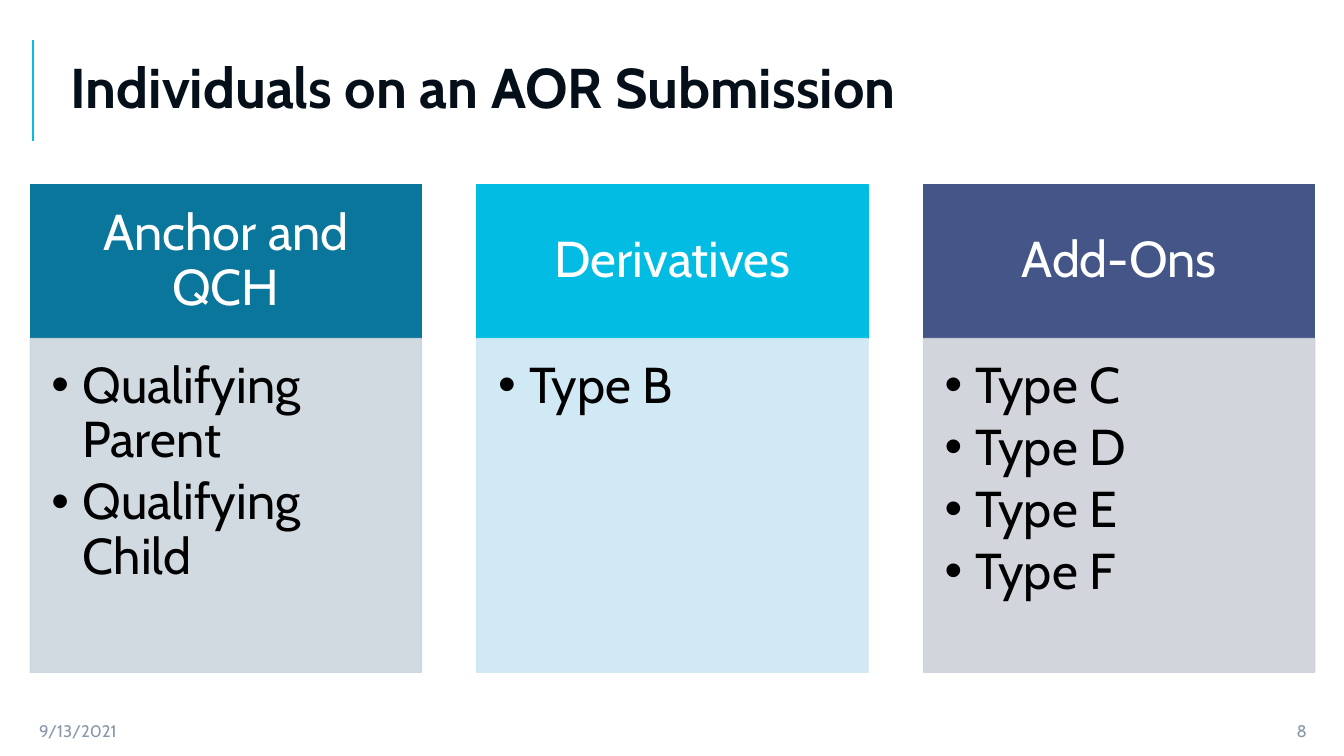
import pptx
import pptx.util
import pptx.dml.color
import pptx.enum.shapes
import pptx.enum.text
import pptx.oxml
import pptx.oxml.ns
from lxml import etree

Inches = pptx.util.Inches
Pt = pptx.util.Pt
RGBColor = pptx.dml.color.RGBColor
PP_ALIGN = pptx.enum.text.PP_ALIGN
MSO_ANCHOR = pptx.enum.text.MSO_ANCHOR
qn = pptx.oxml.ns.qn

FONT = "Cabin"
WHITE = RGBColor(0xFF, 0xFF, 0xFF)
BLACK = RGBColor(0x00, 0x00, 0x00)
NAVY = RGBColor(0x05, 0x0F, 0x1A)
GREY = RGBColor(0x88, 0x97, 0xA8)
TEAL = RGBColor(0x0A, 0x76, 0x9B)
CYAN = RGBColor(0x02, 0xBC, 0xE3)
INDIGO = RGBColor(0x44, 0x55, 0x88)
PALE_TEAL = RGBColor(0xCC, 0xD6, 0xDE)
PALE_CYAN = RGBColor(0xCC, 0xE7, 0xF4)
PALE_INDIGO = RGBColor(0xCF, 0xD1, 0xDA)

COLUMNS = [
    ("Anchor and QCH", ["Qualifying Parent", "Qualifying Child"], TEAL, PALE_TEAL),
    ("Derivatives", ["Type B"], CYAN, PALE_CYAN),
    ("Add-Ons", ["Type C", "Type D", "Type E", "Type F"], INDIGO, PALE_INDIGO),
]


def format_text(tf, size, color, align=PP_ALIGN.LEFT, bold=False, spacing=None):
    """Apply one text style to every paragraph of a frame."""
    tf.word_wrap = True
    for p in tf.paragraphs:
        p.alignment = align
        p.line_spacing = spacing
        for r in p.runs:
            r.font.name = FONT
            r.font.size = Pt(size)
            r.font.bold = bold
            r.font.color.rgb = color


def set_insets(tf, left, top, right, bottom):
    """Set the margins of a text frame in inches."""
    tf.margin_left, tf.margin_top = Inches(left), Inches(top)
    tf.margin_right, tf.margin_bottom = Inches(right), Inches(bottom)


def add_panel(s, x, y, w, h, color, text):
    """Add a flat rectangle holding text and return it."""
    sp = s.shapes.add_shape(pptx.enum.shapes.MSO_SHAPE.RECTANGLE,
                            Inches(x), Inches(y), Inches(w), Inches(h))
    sp.shadow.inherit = False
    sp.fill.solid()
    sp.fill.fore_color.rgb = color
    sp.line.color.rgb = color
    sp.line.width = Pt(1)
    sp.text_frame.text = text
    return sp


def set_bullets(tf):
    """Give each paragraph a hanging bullet."""
    for p in tf.paragraphs:
        p.space_after = Pt(5.4)
        pPr = p._p.get_or_add_pPr()
        pPr.set("marL", str(Inches(0.31)))
        pPr.set("indent", str(-Inches(0.31)))
        etree.SubElement(pPr, qn("a:buFont")).set("typeface", "Arial")
        etree.SubElement(pPr, qn("a:buChar")).set("char", "•")


def add_column(s, x, y, w, h, heading, items, dark, pale):
    """Add a heading panel above a translucent bulleted panel."""
    head_h = 1.53
    head = add_panel(s, x, y, w, head_h, dark, heading)
    tf = head.text_frame
    tf.vertical_anchor = MSO_ANCHOR.MIDDLE
    set_insets(tf, 0.28, 0.16, 0.28, 0.16)
    format_text(tf, 36, WHITE, PP_ALIGN.CENTER, spacing=0.9)

    body = add_panel(s, x, y + head_h, w, h - head_h, pale, "\n".join(items))
    for clr in body._element.spPr.iter(qn("a:srgbClr")):
        etree.SubElement(clr, qn("a:alpha")).set("val", "90000")
    tf = body.text_frame
    tf.vertical_anchor = MSO_ANCHOR.TOP
    set_insets(tf, 0.21, 0.21, 0.28, 0.32)
    format_text(tf, 36, BLACK, spacing=0.9)
    set_bullets(tf)


def add_title(s, x, y, w, h, text):
    """Add the accent rule and fill the title placeholder beside it."""
    rule = s.shapes.add_connector(pptx.enum.shapes.MSO_CONNECTOR.STRAIGHT,
                                  Inches(x), Inches(y + h), Inches(x), Inches(y))
    rule.line.color.rgb = CYAN
    rule.line.width = Pt(1.5)
    etree.SubElement(rule._element.spPr, qn("a:effectLst"))

    gap = 0.27
    title = s.shapes.title
    title.left, title.top = Inches(x + gap), Inches(y)
    title.width, title.height = Inches(w - gap), Inches(h)
    tf = title.text_frame
    tf.text = text
    tf.auto_size = pptx.enum.text.MSO_AUTO_SIZE.NONE
    tf.vertical_anchor = MSO_ANCHOR.MIDDLE
    format_text(tf, 40, NAVY, bold=True, spacing=0.9)


def add_footer(s, x, y, w, h, date, number):
    """Add the date at the left and the slide number at the right."""
    box_w = 3.3
    for left, text, align in [(x, date, PP_ALIGN.LEFT),
                              (x + w - box_w, number, PP_ALIGN.RIGHT)]:
        box = s.shapes.add_textbox(Inches(left), Inches(y), Inches(box_w), Inches(h))
        tf = box.text_frame
        tf.text = text
        tf.vertical_anchor = MSO_ANCHOR.MIDDLE
        format_text(tf, 12, GREY, align)


def add_columns(s, x, y, w, h, columns):
    """Spread equal columns across the given box."""
    col_w = 3.88
    step = (w - col_w) / (len(columns) - 1)
    for i, column in enumerate(columns):
        add_column(s, x + i * step, y, col_w, h, *column)


def main():
    """Build and save the slide."""
    prs = pptx.Presentation()
    prs.slide_width, prs.slide_height = Inches(13.33), Inches(7.5)
    s = prs.slides.add_slide(prs.slide_layouts.get_by_name("Title Only"))
    add_title(s, 0.33, 0.4, 12.72, 1, "Individuals on an AOR Submission")
    add_columns(s, 0.3, 1.83, 12.74, 4.84, COLUMNS)
    add_footer(s, 0.29, 7.1, 12.77, 0.3, "9/13/2021", "8")
    prs.save("out.pptx")


if __name__ == "__main__":
    main()
